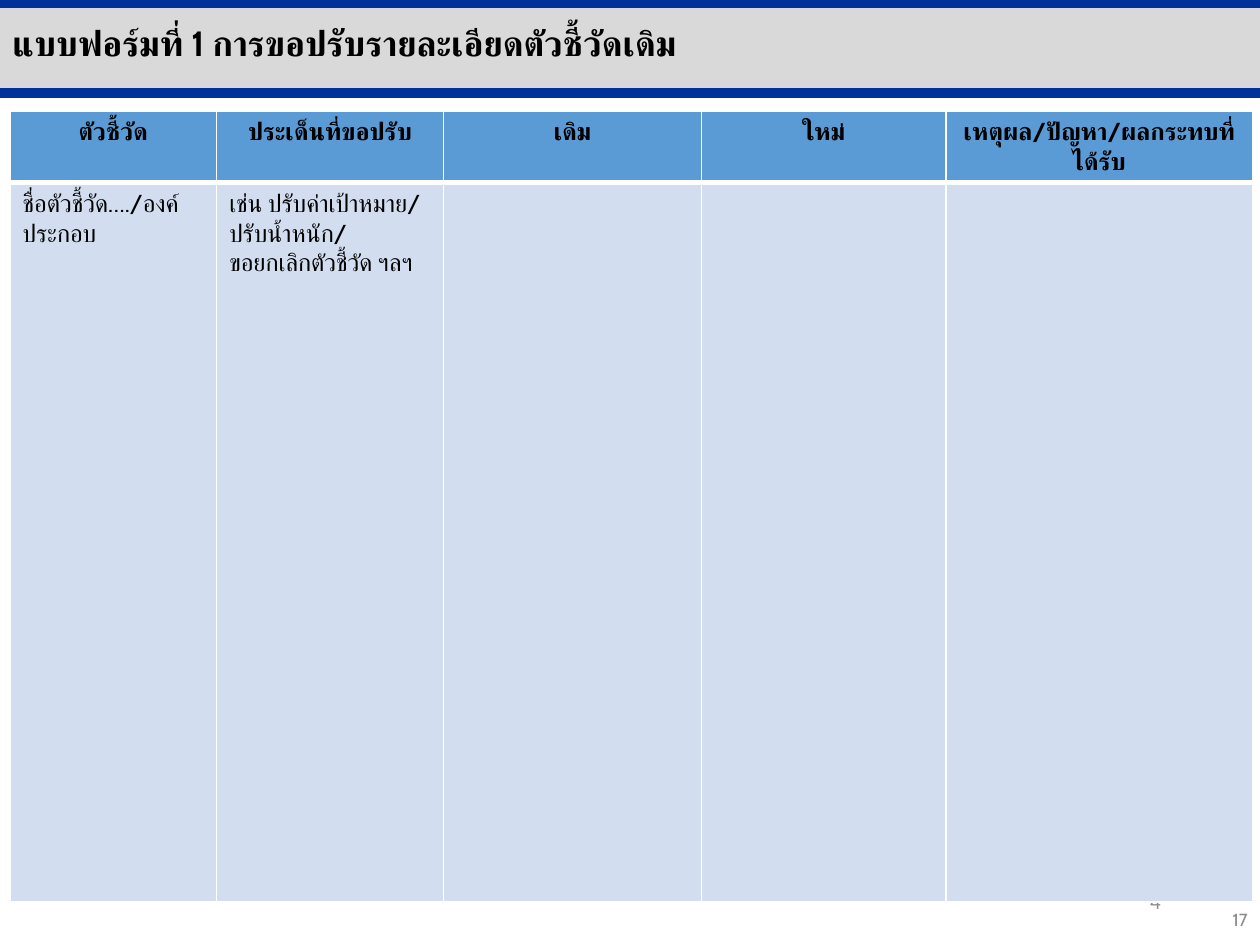
from dataclasses import dataclass

import lxml.etree
import pptx
import pptx.dml.color
import pptx.enum.shapes
import pptx.enum.text
import pptx.oxml.ns
import pptx.util
from pptx.util import Inches


@dataclass(frozen=True)
class Theme:
    font: str = "Cabin"
    number_font: str = "Calibri"
    black: str = "000000"
    white: str = "FFFFFF"
    band: str = "D9D9D9"
    rule: str = "003399"
    header: str = "5B9BD5"
    body: str = "D2DEEF"
    layout_number: str = "8C8C8C"
    slide_number: str = "898989"
    title_size: int = 20
    table_size: int = 14
    layout_number_size: int = 12
    slide_number_size: int = 10


theme = Theme()
rgb = pptx.dml.color.RGBColor.from_string
qn = pptx.oxml.ns.qn
align = pptx.enum.text.PP_ALIGN


def add_run(paragraph, text, size, color=theme.black, bold=False, font=theme.font):
    """Add a run whose typeface also applies to Thai script."""
    run = paragraph.add_run()
    run.text = text
    run.font.size = pptx.util.Pt(size)
    run.font.bold = bold
    run.font.color.rgb = rgb(color)
    run.font.name = font
    lxml.etree.SubElement(run.font._element, qn("a:cs"), typeface=font)


def add_border(cell, side, width):
    properties = cell._tc.get_or_add_tcPr()
    line = lxml.etree.SubElement(
        properties, qn(f"a:ln{side}"), w=str(pptx.util.Pt(width)))
    fill = lxml.etree.SubElement(line, qn("a:solidFill"))
    lxml.etree.SubElement(fill, qn("a:srgbClr"), val=theme.white)


presentation = pptx.Presentation()
presentation.slide_width = Inches(10)
presentation.slide_height = Inches(7.5)
slide = presentation.slides.add_slide(presentation.slide_layouts[6])
shapes = slide.shapes

# Page numbers: the first lies behind the table, the second below it
for left, top, number, size, color, font in [
    (7.06, 6.95, "4", theme.layout_number_size, theme.layout_number, theme.number_font),
    (7.75, 7.1, "17", theme.slide_number_size, theme.slide_number, theme.font),
]:
    number_box = shapes.add_textbox(Inches(left), Inches(top), Inches(2.25), Inches(0.4))
    frame = number_box.text_frame
    frame.word_wrap = True
    frame.vertical_anchor = pptx.enum.text.MSO_ANCHOR.MIDDLE
    frame.paragraphs[0].alignment = align.RIGHT
    add_run(frame.paragraphs[0], number, size, color, font=font)

# Title band between two rules
band = shapes.add_shape(pptx.enum.shapes.MSO_SHAPE.RECTANGLE,
                        Inches(0), Inches(0.05), Inches(10), Inches(0.68))
band.shadow.inherit = False
band.fill.solid()
band.fill.fore_color.rgb = rgb(theme.band)
band.line.fill.background()

for height in (0.74, 0.02):
    rule = shapes.add_connector(pptx.enum.shapes.MSO_CONNECTOR.STRAIGHT,
                                Inches(0), Inches(height), Inches(10), Inches(height))
    rule.line.color.rgb = rgb(theme.rule)
    rule.line.width = pptx.util.Pt(6)
    lxml.etree.SubElement(rule._element.spPr, qn("a:effectLst"))

title = shapes.add_textbox(Inches(0), Inches(0.12), Inches(9.31), Inches(0.44))
title.text_frame.word_wrap = True
title.text_frame.auto_size = pptx.enum.text.MSO_AUTO_SIZE.SHAPE_TO_FIT_TEXT
add_run(title.text_frame.paragraphs[0], "แบบฟอร์มที่ 1 การขอปรับรายละเอียดตัวชี้วัดเดิม",
        theme.title_size, bold=True)

# Request form
column_widths = [1.64, 1.8, 2.05, 1.94, 2.43]
row_heights = [0.56, 5.71]
rows = [
    ["ตัวชี้วัด", "ประเด็นที่ขอปรับ", "เดิม", "ใหม่", "เหตุผล/ปัญหา/ผลกระทบที่ได้รับ"],
    ["ชื่อตัวชี้วัด…./องค์ประกอบ",
     "เช่น ปรับค่าเป้าหมาย/\nปรับน้ำหนัก/\nขอยกเลิกตัวชี้วัด ฯลฯ", "", "", ""],
]
table = shapes.add_table(len(rows), len(column_widths), Inches(0.08), Inches(0.88),
                         Inches(sum(column_widths)), Inches(sum(row_heights))).table
for column, width in zip(table.columns, column_widths):
    column.width = Inches(width)
for row, height in zip(table.rows, row_heights):
    row.height = Inches(height)

for row_index, texts in enumerate(rows):
    is_header = row_index == 0
    for column_index, text in enumerate(texts):
        cell = table.cell(row_index, column_index)
        for side in "LRTB":
            between_rows = side == ("B" if is_header else "T")
            add_border(cell, side, 3 if between_rows else 1)
        cell.fill.solid()
        cell.fill.fore_color.rgb = rgb(theme.header if is_header else theme.body)
        paragraph = cell.text_frame.paragraphs[0]
        paragraph.alignment = align.CENTER if is_header else align.LEFT
        if not text:
            paragraph.font.size = pptx.util.Pt(theme.table_size)
            continue
        for line_index, line in enumerate(text.split("\n")):
            if line_index:
                paragraph.add_line_break()
            add_run(paragraph, line, theme.table_size, bold=is_header)

presentation.save("out.pptx")
